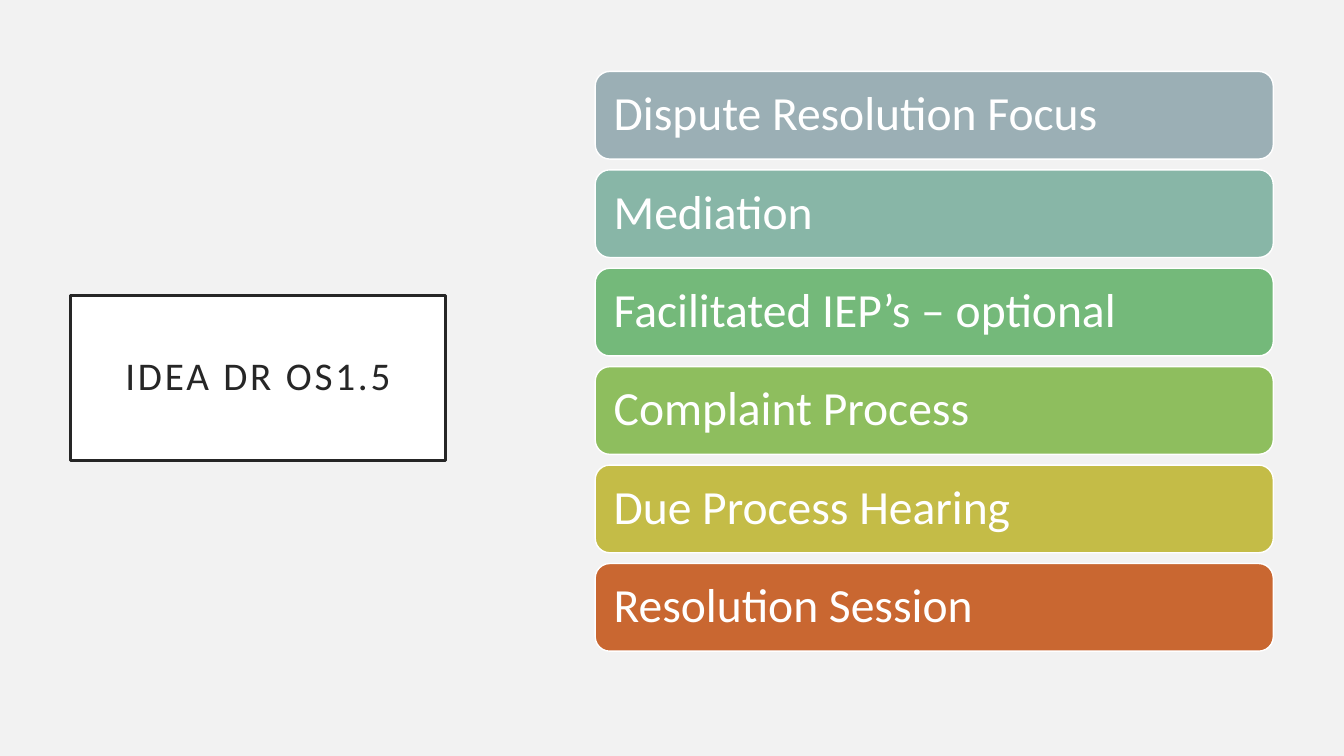
import pptx
import pptx.util
from dataclasses import dataclass
from pptx.dml.color import RGBColor
from pptx.enum.shapes import MSO_SHAPE
from pptx.enum.text import MSO_ANCHOR, MSO_AUTO_SIZE, PP_ALIGN
from pptx.util import Cm


@dataclass(frozen=True)
class Theme:
    font: str = "Calibri"
    background: str = "F2F2F2"
    light: str = "FFFFFF"
    dark: str = "262626"
    title_size: int = 28
    topic_size: int = 34


theme = Theme()


def paint(shape, fill, line, line_width):
    shape.fill.solid()
    shape.fill.fore_color.rgb = RGBColor.from_string(fill)
    shape.line.color.rgb = RGBColor.from_string(line)
    shape.line.width = pptx.util.Pt(line_width)


def write(shape, text, size, color, align, inset):
    """Put one vertically centred line of text in the shape and return its run."""
    frame = shape.text_frame
    frame.word_wrap = True
    frame.auto_size = MSO_AUTO_SIZE.NONE
    frame.vertical_anchor = MSO_ANCHOR.MIDDLE
    frame.margin_left = frame.margin_right = inset
    frame.margin_top = frame.margin_bottom = inset
    paragraph = frame.paragraphs[0]
    paragraph.alignment = align
    paragraph.line_spacing = 0.9
    run = paragraph.add_run()
    run.text = text
    run.font.name = theme.font
    run.font.size = pptx.util.Pt(size)
    run.font.color.rgb = RGBColor.from_string(color)
    return run


deck = pptx.Presentation()
deck.slide_width, deck.slide_height = Cm(33.87), Cm(19.05)
slide = deck.slides.add_slide(deck.slide_layouts.get_by_name("Title Only"))
slide.background.fill.solid()
slide.background.fill.fore_color.rgb = RGBColor.from_string(theme.background)

# Framed title on the left
title = slide.shapes.title
title.left, title.top, title.width, title.height = Cm(1.78), Cm(7.44), Cm(9.45), Cm(4.17)
paint(title, theme.light, theme.dark, 2.5)
heading = write(title, "IDEA DR OS1.5", theme.title_size, theme.dark, PP_ALIGN.CENTER, Cm(0.51))
heading.font._element.set("spc", "200")

# Stack of topic bars on the right
topics = [
    ("Dispute Resolution Focus", "9BAFB5"),
    ("Mediation", "88B6A7"),
    ("Facilitated IEP’s – optional", "74B97A"),
    ("Complaint Process", "8EBE5E"),
    ("Due Process Hearing", "C4BC47"),
    ("Resolution Session", "C96731"),
]
first_top, pitch = Cm(1.8), Cm(2.48)
for index, (topic, color) in enumerate(topics):
    bar = slide.shapes.add_shape(
        MSO_SHAPE.ROUNDED_RECTANGLE, Cm(15), first_top + index * pitch, Cm(17.09), Cm(2.21)
    )
    bar.shadow.inherit = False
    paint(bar, color, theme.light, 1)
    write(bar, topic, theme.topic_size, theme.light, PP_ALIGN.LEFT, Cm(0.36))

deck.save("out.pptx")
